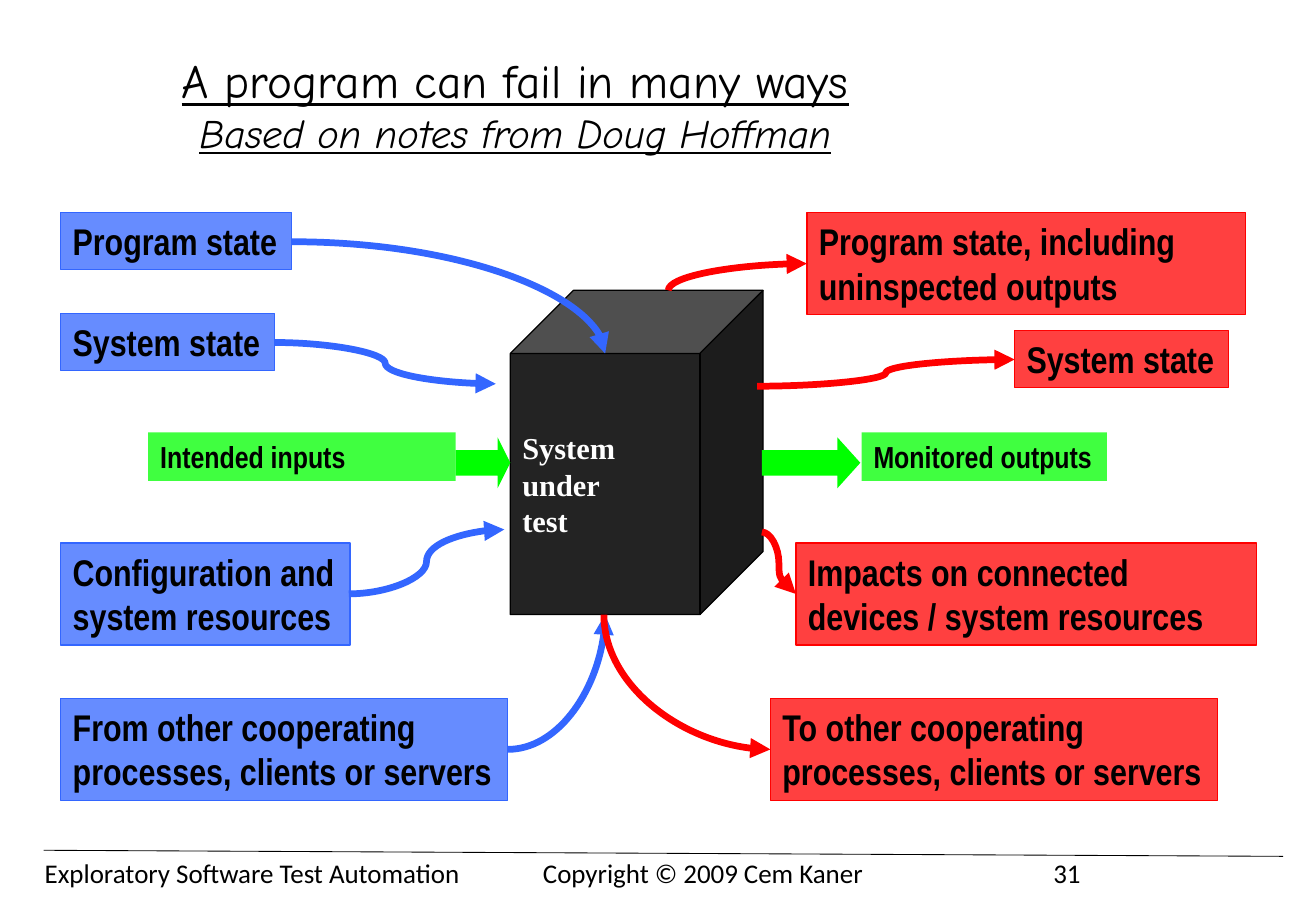
"""Build the slide on the many ways a program can fail."""
from lxml import etree
from pptx import Presentation
from pptx.dml.color import RGBColor
from pptx.enum.shapes import MSO_CONNECTOR, MSO_SHAPE
from pptx.enum.text import MSO_ANCHOR, PP_ALIGN
from pptx.oxml.ns import qn
from pptx.util import Inches, Pt

BLACK = RGBColor(0x00, 0x00, 0x00)
WHITE = RGBColor(0xFF, 0xFF, 0xFF)
CHARCOAL = RGBColor(0x23, 0x23, 0x23)
BLUE = RGBColor(0x33, 0x66, 0xFF)
GREEN = RGBColor(0x00, 0xFF, 0x00)
RED = RGBColor(0xFF, 0x00, 0x00)
RECT, CUBE, ARROW = MSO_SHAPE.RECTANGLE, MSO_SHAPE.CUBE, MSO_SHAPE.RIGHT_ARROW
STRAIGHT, CURVE = MSO_CONNECTOR.STRAIGHT, MSO_CONNECTOR.CURVE
TOP, MIDDLE = MSO_ANCHOR.TOP, MSO_ANCHOR.MIDDLE
LEFT, CENTER = PP_ALIGN.LEFT, PP_ALIGN.CENTER

prs = Presentation()
prs.slide_width, prs.slide_height = Inches(10.83), Inches(7.5)
s = prs.slides.add_slide(prs.slide_layouts[6])


def write(tf, text, size=22, font="Arial Narrow", color=BLACK, bold=False,
          italic=False, underline=False, align=LEFT, first=True):
    """Write each line of text as a paragraph."""
    tf.word_wrap = True
    for i, line in enumerate(text.split("\n")):
        p = tf.paragraphs[0] if first and i == 0 else tf.add_paragraph()
        p.alignment = align
        r = p.add_run()
        r.text = line
        r.font.size, r.font.name, r.font.color.rgb = Pt(size), font, color
        r.font.bold, r.font.italic, r.font.underline = bold, italic, underline


def connect(kind, x1, y1, x2, y2, color, width):
    """Add a connector without a shadow."""
    c = s.shapes.add_connector(kind, Inches(x1), Inches(y1), Inches(x2), Inches(y2))
    c.line.color.rgb, c.line.width = color, Pt(width)
    etree.SubElement(c._element.spPr, qn("a:effectLst"))
    return c


footer = s.shapes.add_textbox(Inches(0.27), Inches(7), Inches(10.24), Inches(0.37))
write(footer.text_frame,
      "Exploratory Software Test Automation\tCopyright © 2009 Cem Kaner\t31",
      size=16, font="Calibri")
tabs = etree.SubElement(footer.text_frame.paragraphs[0]._p.get_or_add_pPr(), qn("a:tabLst"))
for stop in (4.1, 8.3):
    etree.SubElement(tabs, qn("a:tab"), pos=str(Inches(stop)), algn="l")
connect(STRAIGHT, 0.36, 7, 10.56, 7.05, BLACK, 0.5)

title = s.shapes.add_textbox(Inches(0.81), Inches(0.42), Inches(6.86), Inches(1.25))
tf = title.text_frame
tf.margin_top = tf.margin_bottom = 0
write(tf, "A program can fail in many ways", size=28, font="Comic Neue",
      underline=True, align=CENTER)
write(tf, "Based on notes from Doug Hoffman", size=24, font="Comic Neue",
      italic=True, underline=True, align=CENTER, first=False)

cube = s.shapes.add_shape(CUBE, Inches(4.2), Inches(2.39), Inches(2.08), Inches(2.67))
cube.shadow.inherit = False
cube.fill.solid()
cube.fill.fore_color.rgb = CHARCOAL
cube.line.color.rgb, cube.line.width = BLACK, Pt(0.75)
cube.text_frame.vertical_anchor = MIDDLE
write(cube.text_frame, "System\nunder\ntest", size=18, font="Times New Roman",
      color=WHITE, bold=True)

boxes = [
    (0.5, 1.75, 1.9, 0.47, BLUE, "Program state"),
    (0.5, 2.58, 1.76, 0.47, BLUE, "System state"),
    (1.22, 3.56, 2.53, 0.4, GREEN, "Intended inputs"),
    (0.5, 4.47, 2.38, 0.84, BLUE, "Configuration and\nsystem resources"),
    (0.5, 5.75, 3.68, 0.84, BLUE, "From other cooperating\nprocesses, clients or servers"),
    (6.64, 1.75, 3.61, 0.84, RED, "Program state, including uninspected outputs"),
    (8.35, 2.72, 1.76, 0.47, RED, "System state"),
    (7.09, 3.56, 2.02, 0.4, GREEN, "Monitored outputs"),
    (6.55, 4.47, 3.79, 0.84, RED, "Impacts on connected\ndevices / system resources"),
    (6.34, 5.75, 3.68, 0.84, RED, "To other cooperating\nprocesses, clients or servers"),
]
for x, y, w, h, color, text in boxes:
    sp = s.shapes.add_shape(RECT, Inches(x), Inches(y), Inches(w), Inches(h))
    sp.shadow.inherit = False
    sp.fill.solid()
    sp.fill.fore_color.rgb = color
    clr = sp._element.spPr.find(qn("a:solidFill")).find(qn("a:srgbClr"))
    etree.SubElement(clr, qn("a:alpha"), val="75000")
    if color == GREEN:
        sp.line.fill.background()
    else:
        sp.line.color.rgb, sp.line.width = color, Pt(0.75)
    sp.text_frame.vertical_anchor = TOP
    sp.text_frame.margin_right = 0
    write(sp.text_frame, text, size=18 if color == GREEN else 22, bold=True)

for x, w, head in ((3.75, 0.45, 0.25), (6.27, 0.81, 0.45)):
    sp = s.shapes.add_shape(ARROW, Inches(x), Inches(3.6), Inches(w), Inches(0.42))
    sp.shadow.inherit = False
    sp.adjustments[1] = head
    sp.fill.solid()
    sp.fill.fore_color.rgb = GREEN
    sp.line.fill.background()

curves = [
    (2.4, 1.99, 4.98, 2.91, BLUE, "curvedConnector2", 0),
    (2.26, 2.82, 4.08, 3.16, BLUE, "curvedConnector3", 0),
    (2.87, 4.89, 4.15, 4.36, BLUE, "curvedConnector3", 0),
    (4.18, 6.17, 4.98, 5.06, BLUE, "curvedConnector2", 0),
    (5.96, 1.71, 6.18, 2.85, RED, "curvedConnector2", 270),
    (6.23, 3.18, 8.35, 2.96, RED, "curvedConnector3", 0),
    (6.27, 4.38, 6.55, 4.89, RED, "curvedConnector3", 0),
    (6.21, 4.93, 5.1, 6.3, RED, "curvedConnector2", 270),
]
for x1, y1, x2, y2, color, preset, angle in curves:
    c = connect(CURVE, x1, y1, x2, y2, color, 4)
    spPr = c._element.spPr
    spPr.find(qn("a:prstGeom")).set("prst", preset)
    if angle:
        spPr.find(qn("a:xfrm")).set("rot", str(angle * 60000))
    etree.SubElement(spPr.find(qn("a:ln")), qn("a:tailEnd"), type="triangle")

prs.save("out.pptx")
